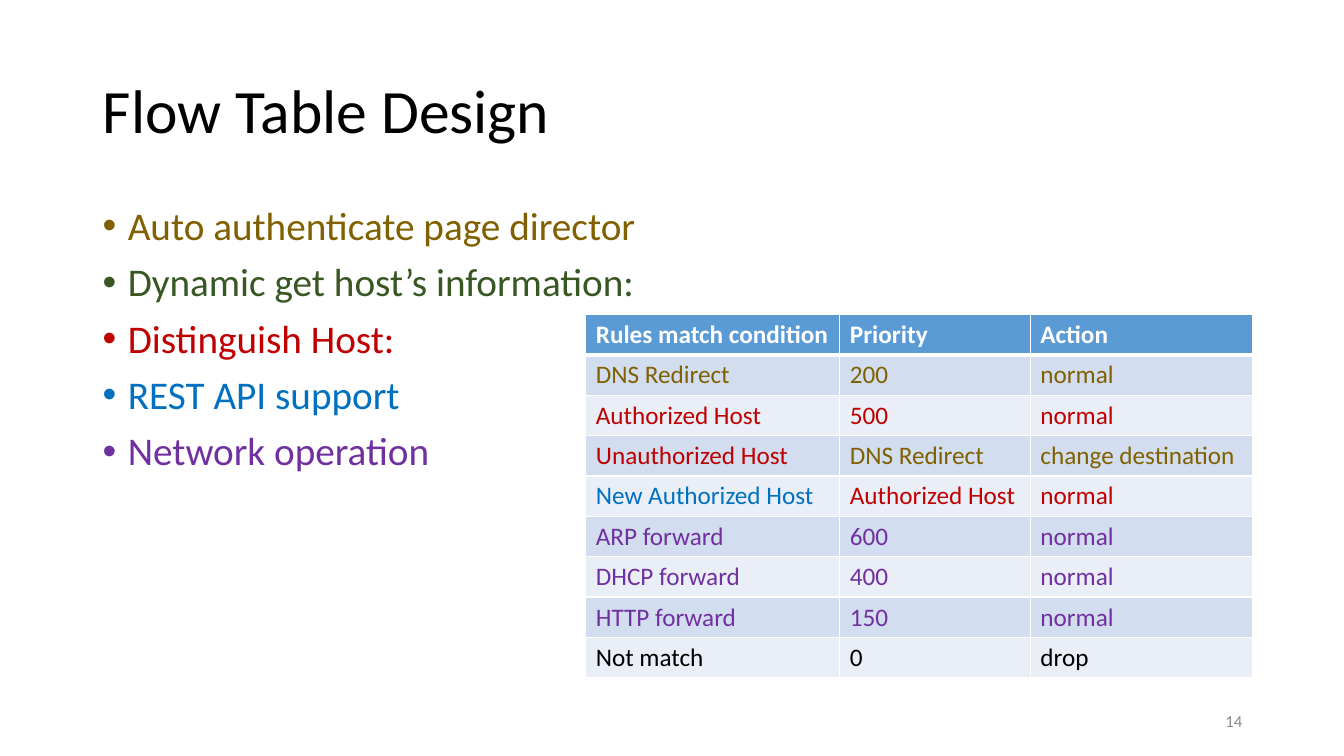
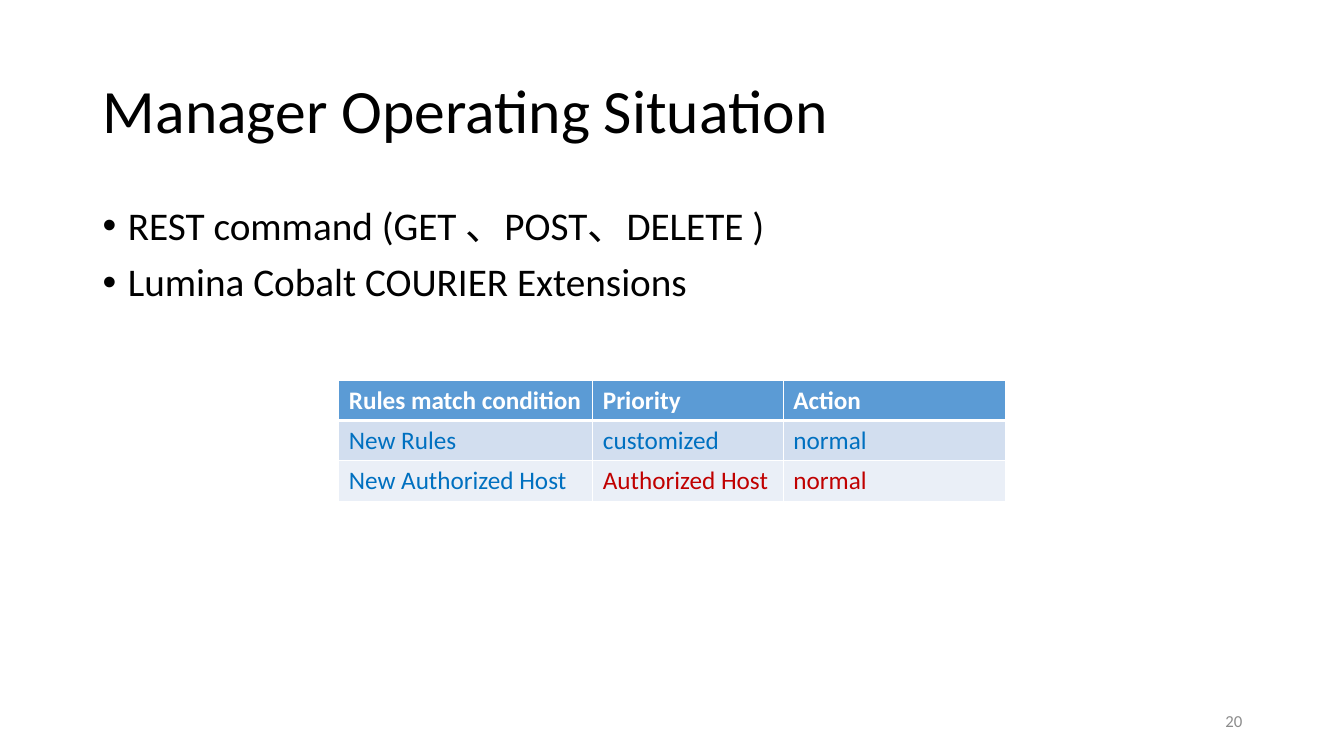
from pptx import Presentation
from pptx.dml.color import RGBColor
from pptx.enum import text as t
from pptx.oxml import parse_xml
from pptx.oxml.ns import nsdecls
from pptx.util import Inches, Pt

BLACK = RGBColor(0x00, 0x00, 0x00)
WHITE = RGBColor(0xFF, 0xFF, 0xFF)
GRAY = RGBColor(0x8C, 0x8C, 0x8C)
OLIVE = RGBColor(0x80, 0x60, 0x00)
GREEN = RGBColor(0x38, 0x57, 0x23)
RED = RGBColor(0xC0, 0x00, 0x00)
BLUE = RGBColor(0x00, 0x70, 0xC0)
PURPLE = RGBColor(0x70, 0x30, 0xA0)
HEADER_FILL = RGBColor(0x5B, 0x9B, 0xD5)
BAND_FILLS = (RGBColor(0xD2, 0xDE, 0xEF), RGBColor(0xEA, 0xEF, 0xF7))

FONT = "Calibri"
LEFT, WIDTH = Inches(0.92), Inches(11.5)
COLUMNS = (("Rules match condition", 2.52), ("Priority", 1.89), ("Action", 2.2))
ROW_HEIGHT = Inches(0.4)


class SlideBuilder:
    """Holds the deck style and the slide being built."""

    def __init__(self):
        self.deck = Presentation()
        self.deck.slide_width = Inches(13.33)
        self.deck.slide_height = Inches(7.5)
        self.page = None

    def add_span(self, para, wording, size, color, bold=False):
        span = para.add_run()
        span.text = wording
        span.font.name = FONT
        span.font.size = Pt(size)
        span.font.bold = bold
        span.font.color.rgb = color

    def add_page(self, title, number):
        self.page = self.deck.slides.add_slide(self.deck.slide_layouts[5])
        # Title
        box = self.page.shapes.title
        box.left, box.top, box.width, box.height = LEFT, Inches(0.4), WIDTH, Inches(1.45)
        frame = box.text_frame
        frame.word_wrap = True
        frame.auto_size = t.MSO_AUTO_SIZE.NONE
        frame.vertical_anchor = t.MSO_ANCHOR.MIDDLE
        para = frame.paragraphs[0]
        para.alignment = t.PP_ALIGN.LEFT
        para.line_spacing = 0.9
        self.add_span(para, title, 44, BLACK)
        # Page number
        frame = self.add_box(Inches(9.42), Inches(6.95), Inches(3), Inches(0.4))
        frame.vertical_anchor = t.MSO_ANCHOR.MIDDLE
        para = frame.paragraphs[0]
        para.alignment = t.PP_ALIGN.RIGHT
        self.add_span(para, number, 12, GRAY)

    def add_box(self, left, top, width, height):
        frame = self.page.shapes.add_textbox(left, top, width, height).text_frame
        frame.word_wrap = True
        return frame

    def add_bullets(self, items):
        frame = self.add_box(LEFT, Inches(2), WIDTH, Inches(4.76))
        for index, (wording, color) in enumerate(items):
            para = frame.add_paragraph() if index else frame.paragraphs[0]
            para.line_spacing = 0.9
            para.space_before = Pt(10)
            self.add_span(para, wording, 28, color)
            # Hanging bullet
            props = para._p.get_or_add_pPr()
            props.set("marL", str(Inches(0.25)))
            props.set("indent", str(-Inches(0.25)))
            props.append(parse_xml(f'<a:buFont {nsdecls("a")} typeface="Arial"/>'))
            props.append(parse_xml(f'<a:buChar {nsdecls("a")} char="•"/>'))

    def add_rules(self, left, top, rows):
        header = [(name, WHITE) for name, _ in COLUMNS]
        lines = [header] + rows
        widths = [Inches(width) for _, width in COLUMNS]
        table = self.page.shapes.add_table(
            len(lines), len(widths), left, top, sum(widths), ROW_HEIGHT * len(lines)
        ).table
        for column, width in zip(table.columns, widths):
            column.width = width
        for r, line in enumerate(lines):
            table.rows[r].height = ROW_HEIGHT
            fill = BAND_FILLS[(r - 1) % 2] if r else HEADER_FILL
            for c, (wording, color) in enumerate(line):
                cell = table.cell(r, c)
                cell.fill.solid()
                cell.fill.fore_color.rgb = fill
                self.add_span(cell.text_frame.paragraphs[0], wording, 18, color, r == 0)
                self.add_borders(cell, top=3 if r == 1 else 1, bottom=1 if r else 3)

    def add_borders(self, cell, top, bottom):
        props = cell._tc.get_or_add_tcPr()
        sides = (("lnL", 1), ("lnR", 1), ("lnT", top), ("lnB", bottom))
        for index, (side, points) in enumerate(sides):
            props.insert(index, parse_xml(
                f'<a:{side} {nsdecls("a")} w="{Pt(points)}"><a:solidFill>'
                f'<a:srgbClr val="{WHITE}"/></a:solidFill></a:{side}>'
            ))


def colored(color, *wordings):
    return [(wording, color) for wording in wordings]


def main():
    builder = SlideBuilder()
    new_host = colored(BLUE, "New Authorized Host") + colored(RED, "Authorized Host", "normal")

    # Flow table
    builder.add_page("Flow Table Design", "14")
    builder.add_bullets([
        ("Auto authenticate page director", OLIVE),
        ("Dynamic get host’s information:", GREEN),
        ("Distinguish Host:", RED),
        ("REST API support", BLUE),
        ("Network operation", PURPLE),
    ])
    builder.add_rules(Inches(5.81), Inches(3.12), [
        colored(OLIVE, "DNS Redirect", "200", "normal"),
        colored(RED, "Authorized Host", "500", "normal"),
        colored(RED, "Unauthorized Host") + colored(OLIVE, "DNS Redirect", "change destination"),
        new_host,
        colored(PURPLE, "ARP forward", "600", "normal"),
        colored(PURPLE, "DHCP forward", "400", "normal"),
        colored(PURPLE, "HTTP forward", "150", "normal"),
        colored(BLACK, "Not match", "0", "drop"),
    ])

    # Manager operation
    builder.add_page("Manager Operating Situation", "20")
    builder.add_bullets(colored(
        BLACK, "REST command (GET 、POST、DELETE )", "Lumina Cobalt COURIER Extensions"
    ))
    builder.add_rules(Inches(3.36), Inches(3.77), [
        colored(BLUE, "New Rules", "customized", "normal"),
        new_host,
    ])

    builder.deck.save("out.pptx")


if __name__ == "__main__":
    main()
